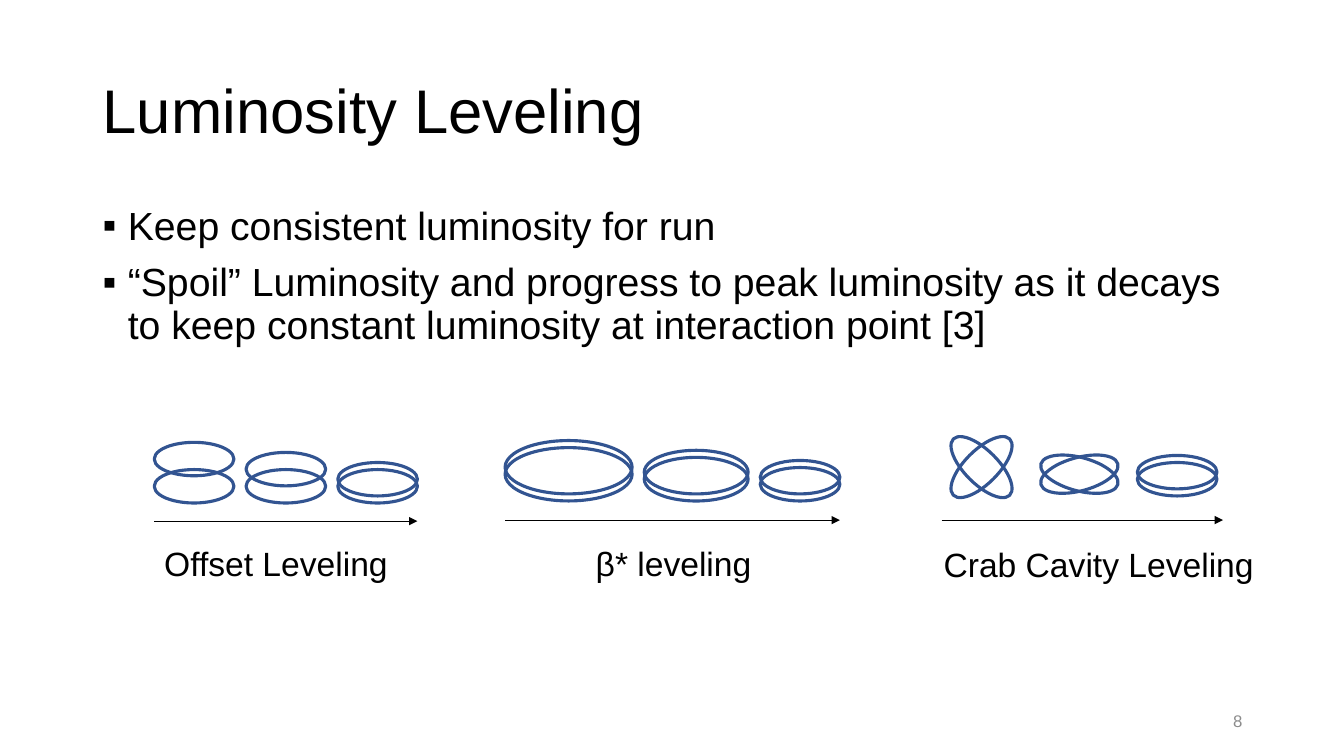
from pptx import Presentation
from pptx.dml.color import RGBColor
from pptx.enum.shapes import MSO_CONNECTOR as Connector, MSO_SHAPE as Shape
from pptx.enum.text import MSO_ANCHOR as Anchor, PP_ALIGN as Align
from pptx.oxml.ns import qn
from pptx.util import Inches, Pt
from lxml.etree import SubElement

BLACK = RGBColor(0x00, 0x00, 0x00)
GRAY = RGBColor(0x8C, 0x8C, 0x8C)
BLUE = RGBColor(0x32, 0x54, 0x91)
FONT = "Arial"
ASPECT = 0.42

PANELS = [
    dict(box=(1.53, 4.99, 2.61), gap=0.12, arrow_drop=0.18,
         bunches=[dict(width=0.79, shift=shift) for shift in (0.27, 0.17, 0.07)],
         label="Offset Leveling", label_box=(0, 0.35, 2.61, 0.5)),
    dict(box=(5.01, 4.97, 3.32), gap=0.12, arrow_drop=0.19,
         bunches=[dict(width=width, shift=0.07) for width in (1.26, 1.03, 0.79)],
         label="β* leveling", label_box=(0.8, 0.37, 3.21, 0.5)),
    dict(box=(9.34, 4.92, 2.79), gap=0.18, arrow_drop=0.24,
         bunches=[dict(width=0.79, tilt=45, lift=0.12),
                  dict(width=0.79, tilt=15, lift=0.05),
                  dict(width=0.79, shift=0.07)],
         label="Crab Cavity Leveling", label_box=(-0.08, 0.43, 3.31, 0.5), wrap=False),
]


def add_text(page, box, paragraphs, size, color=BLACK, align=Align.LEFT,
             anchor=Anchor.TOP, spacing=None, before=0, bullet=None, wrap=True):
    """Add a text box with one format for all of its paragraphs."""
    frame = page.shapes.add_textbox(*map(Inches, box)).text_frame
    frame.word_wrap = wrap
    frame.vertical_anchor = anchor
    for index, text in enumerate(paragraphs):
        para = frame.paragraphs[0] if index == 0 else frame.add_paragraph()
        para.alignment = align
        para.line_spacing = spacing
        para.space_before = Pt(before)
        if bullet:
            props = para._p.get_or_add_pPr()
            props.set("marL", str(Inches(0.25)))
            props.set("indent", str(-Inches(0.25)))
            SubElement(props, qn("a:buFont")).set("typeface", FONT)
            SubElement(props, qn("a:buChar")).set("char", bullet)
        span = para.add_run()
        span.text = text
        span.font.name = FONT
        span.font.size = Pt(size)
        span.font.color.rgb = color


def add_arrow(page, left, top, width):
    """Draw a horizontal arrow that points right."""
    arrow = page.shapes.add_connector(
        Connector.STRAIGHT, Inches(left), Inches(top), Inches(left + width), Inches(top))
    arrow.line.color.rgb = BLACK
    arrow.line.width = Pt(0.5)
    SubElement(arrow.line._get_or_add_ln(), qn("a:tailEnd")).set("type", "triangle")
    SubElement(arrow._element.spPr, qn("a:effectLst"))


def add_bunches(page, left, bottom, width, shift=0, tilt=0, lift=0):
    """Draw two crossing beam bunches, shifted or tilted against each other."""
    height = width * ASPECT
    top = bottom - lift - height
    for offset, angle in ((shift, -tilt), (0, tilt)):
        bunch = page.shapes.add_shape(
            Shape.OVAL, Inches(left), Inches(top - offset), Inches(width), Inches(height))
        bunch.rotation = angle
        bunch.shadow.inherit = False
        bunch.fill.background()
        bunch.line.color.rgb = BLUE
        bunch.line.width = Pt(2.25)


def add_panel(page, box, gap, arrow_drop, bunches, label, label_box, wrap=True):
    """Draw one leveling method: its bunch pairs, time arrow and label."""
    left, bottom, width = box
    position = left
    for pair in bunches:
        add_bunches(page, position, bottom, **pair)
        position += pair["width"] + gap
    add_arrow(page, left, bottom + arrow_drop, width)
    label_left, label_top, *label_size = label_box
    add_text(page, (left + label_left, bottom + label_top, *label_size),
             [label], 24, wrap=wrap)


def add_leveling_slide(deck):
    """Build the slide from its heading, bullets, panels and page number."""
    page = deck.slides.add_slide(deck.slide_layouts[6])
    add_text(page, (0.92, 0.4, 11.5, 1.45), ["Luminosity Leveling"], 44,
             anchor=Anchor.MIDDLE, spacing=0.9)
    add_text(page, (0.92, 2, 11.5, 4.76),
             ["Keep consistent luminosity for run",
              "“Spoil” Luminosity and progress to peak luminosity as it decays "
              "to keep constant luminosity at interaction point [3]"],
             28, spacing=0.9, before=10, bullet="▪")
    for panel in PANELS:
        add_panel(page, **panel)
    add_text(page, (9.42, 6.95, 3, 0.4), ["8"], 12, color=GRAY,
             align=Align.RIGHT, anchor=Anchor.MIDDLE)


def main():
    """Create and save the deck."""
    deck = Presentation()
    deck.slide_width = Inches(13.33)
    deck.slide_height = Inches(7.5)
    add_leveling_slide(deck)
    deck.save("out.pptx")


if __name__ == "__main__":
    main()
